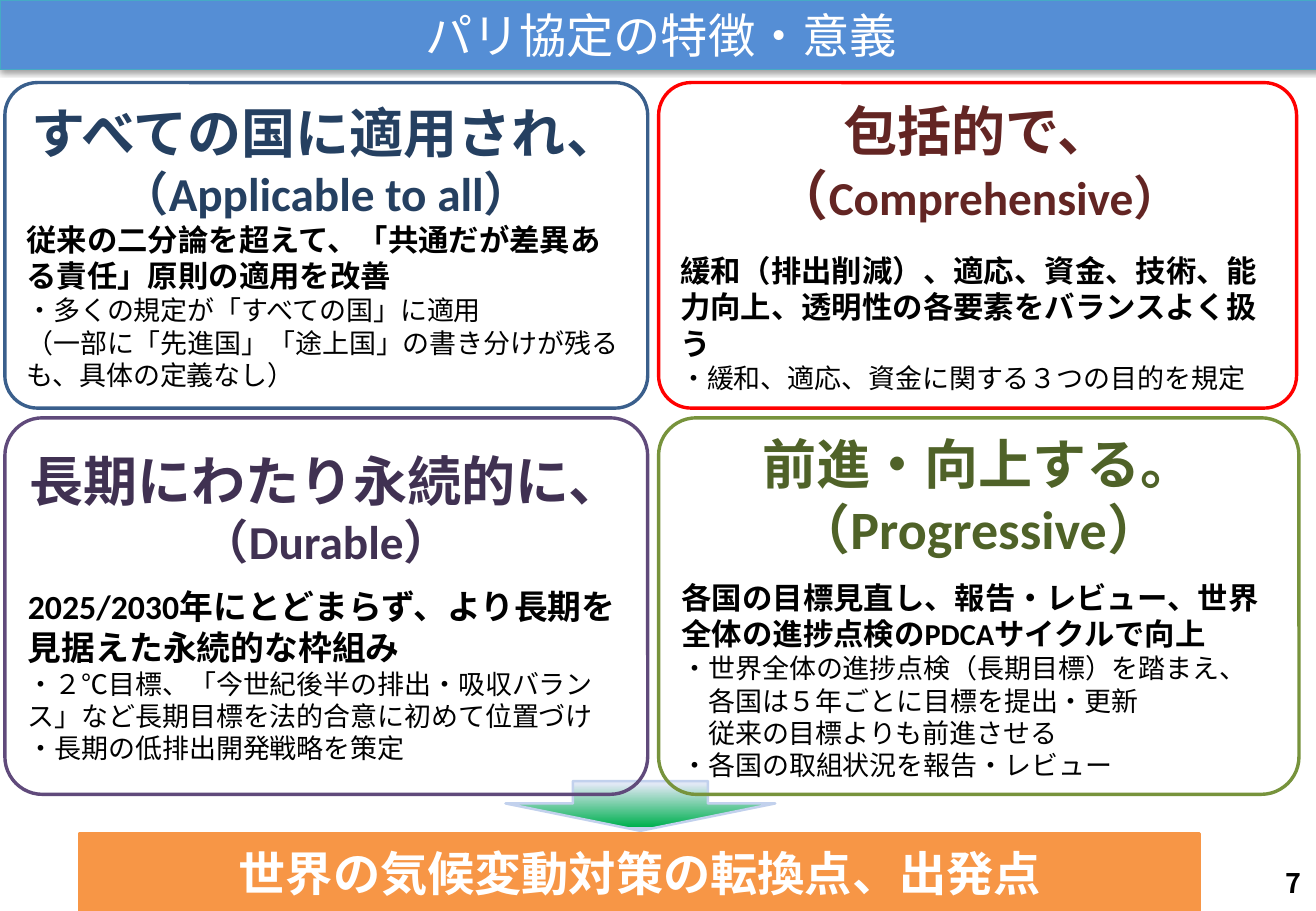
from dataclasses import dataclass

from pptx import Presentation
from pptx.dml.color import RGBColor
from pptx.enum.shapes import MSO_SHAPE as Shp
from pptx.enum.text import MSO_ANCHOR as Anchor, PP_ALIGN as Align
from pptx.oxml import parse_xml
from pptx.oxml.ns import nsdecls, qn
from pptx.util import Inches, Pt

COLORS = {
    "white": "FFFFFF", "black": "000000", "orange": "F79646",
    "title": "558ED5", "title_line": "46AAC5",
    "navy": "254061", "navy_line": "3A5F8C",
    "maroon": "632523", "red_line": "FF0000",
    "olive": "4F6228", "olive_line": "77933C",
    "plum": "403152", "plum_line": "604A7B",
    "arrow_top": "E1E8F5", "arrow_green": "00B050", "arrow_edge": "C2D1ED",
}
BODY_FONT, TITLE_FONT = "Calibri", "Noto Sans CJK JP"
COL_LEFT, ROW_TOP, ROW_HEIGHT = (0.04, 5.42), (0.68, 3.44), (2.68, 3.1)


@dataclass(frozen=True)
class Run:
    text: str
    size: int


@dataclass(frozen=True)
class Point:
    text: str
    indent: float = 0


@dataclass(frozen=True)
class Card:
    col: int
    row: int
    width: float
    color: str
    heading: tuple[tuple[Run, ...], ...]
    gap: int
    lead: Run
    points: tuple[Point, ...]


CARDS = (
    Card(0, 0, 5.29, "navy",
         ((Run("すべての国に適用され、", 32), Run("（Applicable to all）", 28)),), 0,
         Run("従来の二分論を超えて、「共通だが差異ある責任」原則の適用を改善", 18),
         (Point("・多くの規定が「すべての国」に適用"),
          Point("（一部に「先進国」「途上国」の書き分けが残るも、具体の定義なし）"))),
    Card(1, 0, 5.25, "maroon",
         ((Run("包括的で、（", 32), Run("Comprehensive）", 28)),), 15,
         Run("緩和（排出削減）、適応、資金、技術、能力向上、透明性の各要素をバランスよく扱う", 18),
         (Point("・緩和、適応、資金に関する３つの目的を規定"),)),
    Card(1, 1, 5.27, "olive",
         ((Run("前進・向上する。（Progressive）", 32),),), 11,
         Run("各国の目標見直し、報告・レビュー、世界全体の進捗点検のPDCAサイクルで向上", 18),
         (Point("・世界全体の進捗点検（長期目標）を踏まえ、"),
          Point("各国は５年ごとに目標を提出・更新", 0.22),
          Point("従来の目標よりも前進させる", 0.22),
          Point("・各国の取組状況を報告・レビュー"))),
    Card(0, 1, 5.29, "plum",
         ((Run("長期にわたり永続的に、", 32),), (Run("（Durable）", 28),)), 10,
         Run("2025/2030年にとどまらず、より長期を見据えた永続的な枠組み", 20),
         (Point("・２℃目標、「今世紀後半の排出・吸収バランス」など長期目標を法的合意に初めて位置づけ"),
          Point("・長期の低排出開発戦略を策定"))),
)
CARD_LINES = {"navy": "navy_line", "maroon": "red_line",
              "olive": "olive_line", "plum": "plum_line"}


def rgb(name: str) -> RGBColor:
    return RGBColor.from_string(COLORS[name])


def add_run(p, text: str, *, size: int, color: str = "black",
            bold: bool = False, font: str = BODY_FONT) -> None:
    r = p.add_run()
    r.text = text
    r.font.size, r.font.bold, r.font.name = Pt(size), bold, font
    r.font.color.rgb = rgb(color)
    latin = r._r.rPr.find(qn("a:latin"))
    latin.addnext(parse_xml(f'<a:ea {nsdecls("a")} typeface="{font}"/>'))


def next_paragraph(tf, align: Align = Align.LEFT):
    first = tf.paragraphs[0]
    p = tf.add_paragraph() if first.runs else first
    p.alignment = align
    return p


def style(sp, *, line: str, weight: float, fill: str | None = None) -> None:
    if fill:
        sp.fill.solid()
        sp.fill.fore_color.rgb = rgb(fill)
    else:
        sp.fill.background()
    sp.line.color.rgb = rgb(line)
    sp.line.width = Pt(weight)
    sp.shadow.inherit = False


def add_box(s, kind: Shp, left: float, top: float, width: float, height: float):
    sp = s.shapes.add_shape(kind, Inches(left), Inches(top), Inches(width), Inches(height))
    sp.text_frame.word_wrap = True
    sp.text_frame.vertical_anchor = Anchor.MIDDLE
    return sp


def add_title(s) -> None:
    sp = s.shapes.title
    sp.left, sp.top, sp.width, sp.height = 0, 0, Inches(10.88), Inches(0.57)
    style(sp, fill="title", line="title_line", weight=0.75)
    sp._element.spPr.find(qn("a:effectLst")).append(parse_xml(
        f'<a:outerShdw {nsdecls("a")} blurRad="{Pt(3.1)}" dist="{Pt(1.6)}" dir="5400000" '
        f'rotWithShape="0"><a:srgbClr val="{COLORS["black"]}"><a:alpha val="38000"/>'
        '</a:srgbClr></a:outerShdw>'))
    sp.text_frame.vertical_anchor = Anchor.MIDDLE
    add_run(next_paragraph(sp.text_frame, Align.CENTER), "パリ協定の特徴・意義",
            size=28, color="white", font=TITLE_FONT)


def add_arrow(s) -> None:
    sp = add_box(s, Shp.DOWN_ARROW, 4.16, 6.43, 2.22, 0.41)
    sp.adjustments[0], sp.adjustments[1] = 0.5, 0.55
    style(sp, line="arrow_edge", weight=1.5)
    stops = "".join(
        f'<a:gs pos="{pos * 1000}"><a:srgbClr val="{COLORS[name]}"/></a:gs>'
        for pos, name in ((6, "arrow_top"), (92, "arrow_green"), (93, "arrow_edge")))
    spPr = sp._element.spPr
    spPr.replace(spPr.find(qn("a:noFill")), parse_xml(
        f'<a:gradFill {nsdecls("a")}><a:gsLst>{stops}</a:gsLst>'
        '<a:lin ang="5400000" scaled="0"/></a:gradFill>'))


def add_banner(s) -> None:
    sp = add_box(s, Shp.RECTANGLE, 0.66, 6.86, 9.21, 0.65)
    style(sp, fill="orange", line="orange", weight=2)
    add_run(next_paragraph(sp.text_frame, Align.CENTER), "世界の気候変動対策の転換点、出発点",
            size=28, color="white", bold=True)


def add_card(s, card: Card) -> None:
    sp = add_box(s, Shp.ROUNDED_RECTANGLE, COL_LEFT[card.col], ROW_TOP[card.row],
                 card.width, ROW_HEIGHT[card.row])
    sp.adjustments[0] = 0.1
    style(sp, line=CARD_LINES[card.color], weight=2)
    tf = sp.text_frame
    for runs in card.heading:
        p = next_paragraph(tf, Align.CENTER)
        for run in runs:
            add_run(p, run.text, size=run.size, color=card.color, bold=True)
    p = next_paragraph(tf)
    p.space_before = Pt(card.gap)
    add_run(p, card.lead.text, size=card.lead.size, bold=True)
    for point in card.points:
        p = next_paragraph(tf)
        if point.indent:
            p._p.get_or_add_pPr().set("marL", str(Inches(point.indent)))
        add_run(p, point.text, size=16)


def add_page_number(s) -> None:
    sp = s.shapes.add_textbox(Inches(8.28), Inches(7.07), Inches(2.53), Inches(0.4))
    tf = sp.text_frame
    tf.word_wrap = True
    tf.vertical_anchor = Anchor.MIDDLE
    add_run(next_paragraph(tf, Align.RIGHT), "7", size=16, bold=True, font=TITLE_FONT)


def main() -> None:
    prs = Presentation()
    prs.slide_width, prs.slide_height = Inches(10.83), Inches(7.5)
    s = prs.slides.add_slide(prs.slide_layouts[5])
    add_title(s)
    add_arrow(s)
    add_banner(s)
    for card in CARDS:
        add_card(s, card)
    add_page_number(s)
    prs.save("out.pptx")


if __name__ == "__main__":
    main()
